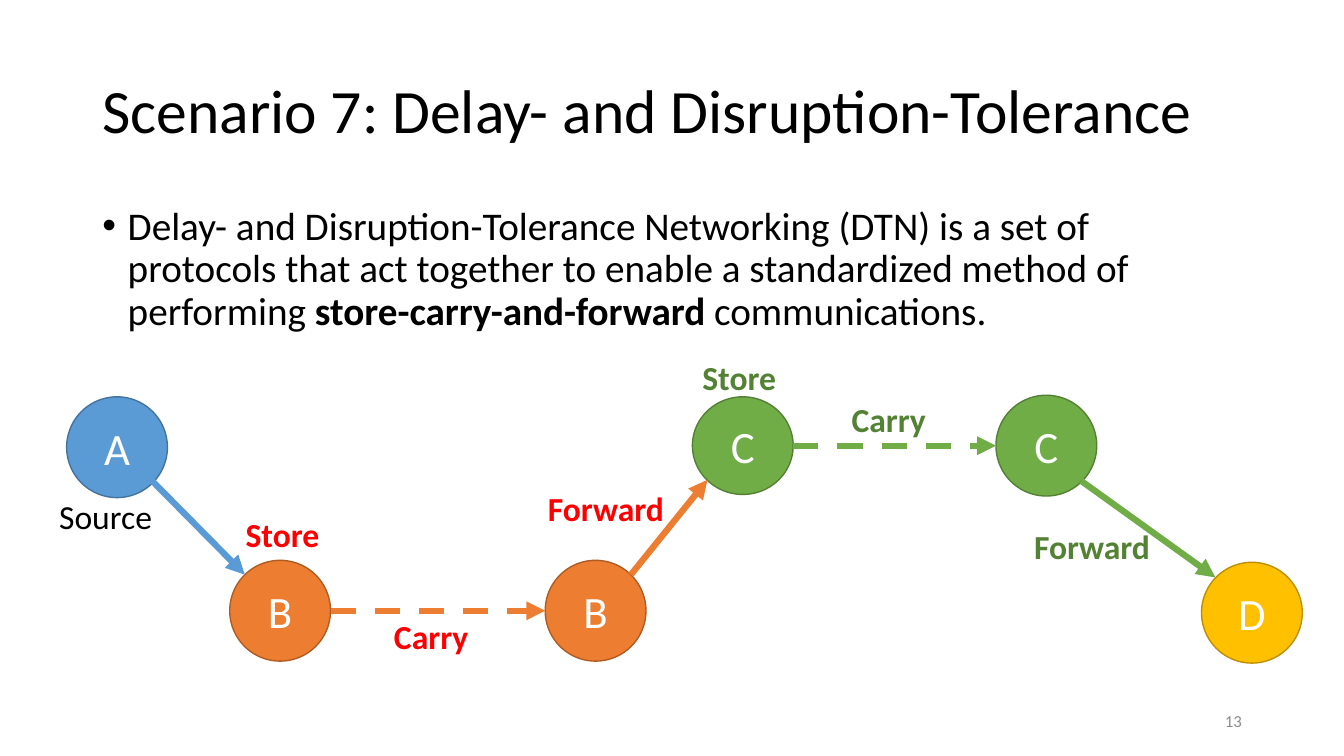
from lxml import etree
from pptx import Presentation
from pptx.dml.color import RGBColor
from pptx.enum.dml import MSO_LINE
from pptx.enum.shapes import MSO_CONNECTOR, MSO_SHAPE
from pptx.enum.text import MSO_ANCHOR, MSO_AUTO_SIZE, PP_ALIGN
from pptx.oxml.ns import qn
from pptx.util import Cm, Pt

OVAL = MSO_SHAPE.OVAL
STRAIGHT = MSO_CONNECTOR.STRAIGHT
DASH = MSO_LINE.DASH
MIDDLE = MSO_ANCHOR.MIDDLE
FIT_SHAPE = MSO_AUTO_SIZE.SHAPE_TO_FIT_TEXT
LEFT, CENTER, RIGHT = PP_ALIGN.LEFT, PP_ALIGN.CENTER, PP_ALIGN.RIGHT

BLACK = RGBColor(0x00, 0x00, 0x00)
WHITE = RGBColor(0xFF, 0xFF, 0xFF)
GRAY = RGBColor(0x8C, 0x8C, 0x8C)
RED = RGBColor(0xFF, 0x00, 0x00)
BLUE = RGBColor(0x5B, 0x9B, 0xD5)
BLUE_EDGE = RGBColor(0x43, 0x73, 0x9E)
ORANGE = RGBColor(0xED, 0x7D, 0x31)
ORANGE_EDGE = RGBColor(0xAF, 0x5C, 0x24)
GREEN = RGBColor(0x70, 0xAD, 0x47)
GREEN_EDGE = RGBColor(0x53, 0x80, 0x35)
GREEN_TEXT = RGBColor(0x54, 0x82, 0x35)
GOLD = RGBColor(0xFF, 0xC0, 0x00)
GOLD_EDGE = RGBColor(0xBD, 0x8E, 0x00)


def add_text(text, *, tf, size, color=BLACK, bold=False, align=LEFT):
    p = tf.paragraphs[0]
    p.alignment = align
    r = p.add_run()
    r.text = text
    r.font.name = "Calibri"
    r.font.size = Pt(size)
    r.font.bold = bold
    r.font.color.rgb = color
    return p


prs = Presentation()
prs.slide_width, prs.slide_height = Cm(33.87), Cm(19.05)
s = prs.slides.add_slide(prs.slide_layouts[6])

tf = s.shapes.add_textbox(Cm(2.33), Cm(1.02), Cm(29.21), Cm(3.68)).text_frame
tf.word_wrap = True
tf.vertical_anchor = MIDDLE
p = add_text("Scenario 7: Delay- and Disruption-Tolerance", tf=tf, size=44)
p.line_spacing = 0.9

tf = s.shapes.add_textbox(Cm(2.33), Cm(5.08), Cm(29.21), Cm(12.09)).text_frame
tf.word_wrap = True
for text, bold in [
    ("Delay- and Disruption-Tolerance Networking (DTN) is a set of protocols that act "
     "together to enable a standardized method of performing ", False),
    ("store-carry-and-forward ", True),
    ("communications.", False),
]:
    p = add_text(text, tf=tf, size=28, bold=bold)
p.line_spacing = 0.9
p.space_before = Pt(10)
pPr = p._p.get_or_add_pPr()
pPr.set("marL", str(Cm(0.64)))
pPr.set("indent", str(-Cm(0.64)))
etree.SubElement(pPr, qn("a:buFont"), typeface="Arial")
etree.SubElement(pPr, qn("a:buChar"), char="•")

tf = s.shapes.add_textbox(Cm(23.93), Cm(17.65), Cm(7.62), Cm(1.02)).text_frame
tf.word_wrap = True
tf.vertical_anchor = MIDDLE
add_text("13", tf=tf, size=12, color=GRAY, align=RIGHT)

nodes = [
    ("A", 1.68, 10.0, 2.54, BLUE, BLUE_EDGE),
    ("B", 5.79, 14.12, 2.54, ORANGE, ORANGE_EDGE),
    ("B", 13.74, 14.12, 2.54, ORANGE, ORANGE_EDGE),
    ("C", 17.45, 10.0, 2.46, GREEN, GREEN_EDGE),
    ("C", 25.1, 9.96, 2.54, GREEN, GREEN_EDGE),
    ("D", 30.28, 14.17, 2.54, GOLD, GOLD_EDGE),
]
for name, x, y, height, fill, edge in nodes:
    sp = s.shapes.add_shape(OVAL, Cm(x), Cm(y), Cm(2.54), Cm(height))
    sp.shadow.inherit = False
    sp.fill.solid()
    sp.fill.fore_color.rgb = fill
    sp.line.color.rgb = edge
    sp.line.width = Pt(1)
    sp.text_frame.vertical_anchor = MIDDLE
    add_text(name, tf=sp.text_frame, size=32, color=WHITE, align=CENTER)

hops = [
    (3.53, 11.81, 6.17, 14.48, BLUE, False),
    (8.33, 15.39, 13.74, 15.39, ORANGE, True),
    (15.9, 14.48, 17.83, 12.09, ORANGE, False),
    (19.99, 11.23, 25.1, 11.23, GREEN, True),
    (27.25, 12.12, 30.63, 14.55, GREEN, False),
]
for x1, y1, x2, y2, color, carried in hops:
    line = s.shapes.add_connector(STRAIGHT, Cm(x1), Cm(y1), Cm(x2), Cm(y2))
    line.line.color.rgb = color
    line.line.width = Pt(4.5)
    if carried:
        line.line.dash_style = DASH
    etree.SubElement(line.line._get_or_add_ln(), qn("a:tailEnd"), type="triangle")
    etree.SubElement(line._element.spPr, qn("a:effectLst"))

labels = [
    ("Source", 1.24, 12.37, 2.87, BLACK),
    ("Store", 5.94, 12.83, 2.39, RED),
    ("Carry", 9.68, 15.39, 2.41, RED),
    ("Forward", 13.56, 12.17, 3.45, RED),
    ("Store", 17.45, 8.86, 2.39, GREEN_TEXT),
    ("Carry", 21.21, 9.93, 2.41, GREEN_TEXT),
    ("Forward", 25.81, 13.13, 3.45, GREEN_TEXT),
]
for text, x, y, width, color in labels:
    tf = s.shapes.add_textbox(Cm(x), Cm(y), Cm(width), Cm(1.27)).text_frame
    tf.word_wrap = False
    tf.auto_size = FIT_SHAPE
    add_text(text, tf=tf, size=24, color=color, bold=color != BLACK)

prs.save("out.pptx")
